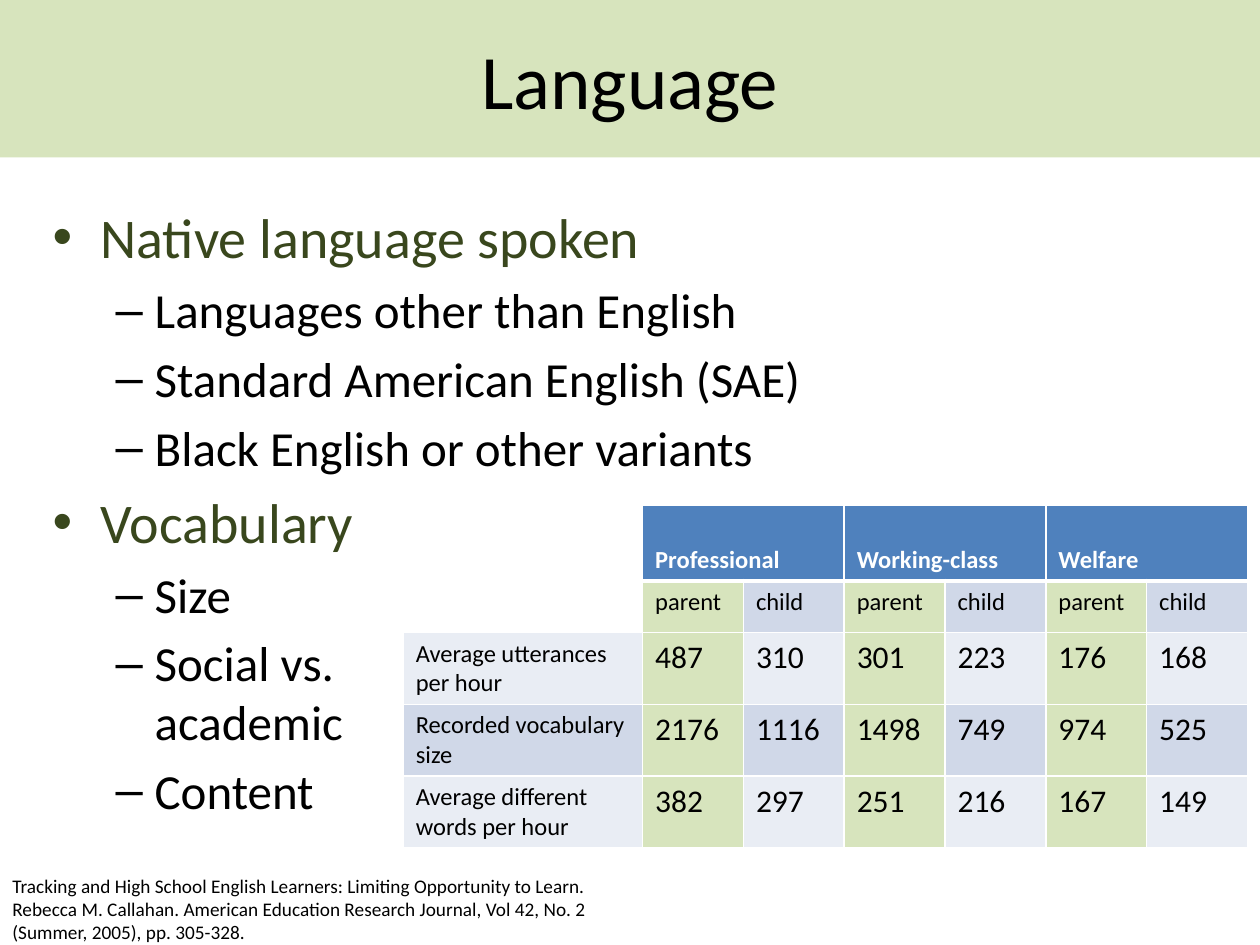
from lxml import etree
from pptx import Presentation
from pptx import util as u
from pptx.dml import color
from pptx.enum import text
from pptx.oxml import ns

FONT = "Calibri"
BLACK, WHITE, OLIVE = "000000", "FFFFFF", "39471D"
GREEN, BLUE = "D7E4BD", "4F81BD"
BANDS = ["D0D8E8", "E9EDF4"]


def rgb(value):
    return color.RGBColor.from_string(value)


def write(para, words, size=14, ink=BLACK, bold=False, align=None):
    para.text = words
    para.alignment = align
    for span in para.runs:
        span.font.name = FONT
        span.font.size = u.Pt(size)
        span.font.bold = bold
        span.font.color.rgb = rgb(ink)


def add_bullet(para, mark, left, hang):
    props = para._p.get_or_add_pPr()
    props.set("marL", str(u.Inches(left)))
    props.set("indent", str(-u.Inches(hang)))
    font = etree.SubElement(props, ns.qn("a:buFont"))
    font.set("typeface", "Arial")
    etree.SubElement(props, ns.qn("a:buChar")).set("char", mark)


def set_borders(cell, bottom=1):
    props = cell._tc.get_or_add_tcPr()
    for side, width in [("L", 1), ("R", 1), ("T", 1), ("B", bottom)]:
        line = etree.SubElement(props, ns.qn("a:ln" + side))
        line.set("w", str(u.Pt(width)))
        fill = etree.SubElement(line, ns.qn("a:solidFill"))
        etree.SubElement(fill, ns.qn("a:srgbClr")).set("val", WHITE)


class SlideBuilder:
    # Bullet mark, left indent, hanging indent, text size, colour per level
    levels = [("•", 0.38, 0.38, 32, OLIVE), ("–", 0.81, 0.31, 28, BLACK)]

    def __init__(self, slide):
        self.slide = slide

    def title(self, words, left, top, width, height):
        box = self.slide.shapes.title
        box.left, box.top = u.Inches(left), u.Inches(top)
        box.width, box.height = u.Inches(width), u.Inches(height)
        box.fill.solid()
        box.fill.fore_color.rgb = rgb(GREEN)
        box.text_frame.vertical_anchor = text.MSO_ANCHOR.MIDDLE
        write(box.text_frame.paragraphs[0], words, size=44,
              align=text.PP_ALIGN.CENTER)

    def text_box(self, left, top, width, height):
        box = self.slide.shapes.add_textbox(
            u.Inches(left), u.Inches(top), u.Inches(width), u.Inches(height))
        box.text_frame.word_wrap = True
        return box.text_frame

    def bullets(self, items, *place):
        frame = self.text_box(*place)
        for i, (level, words) in enumerate(items):
            para = frame.add_paragraph() if i else frame.paragraphs[0]
            mark, left, hang, size, ink = self.levels[level]
            write(para, words, size=size, ink=ink)
            para.level = level
            para.space_before = u.Pt(size * 0.2)
            add_bullet(para, mark, left, hang)

    def note(self, words, *place):
        write(self.text_box(*place).paragraphs[0], words, size=11)

    def table(self, groups, rows, left, top, widths, heights):
        grid = self.slide.shapes.add_table(
            len(heights), len(widths), u.Inches(left), u.Inches(top),
            u.Inches(sum(widths)), u.Inches(sum(heights))).table
        for column, width in zip(grid.columns, widths):
            column.width = u.Inches(width)
        for row, height in zip(grid.rows, heights):
            row.height = u.Inches(height)

        # Group headings, each over a parent and a child column
        for i, words in enumerate(groups):
            cell = grid.cell(0, 1 + 2 * i)
            cell.merge(grid.cell(0, 2 + 2 * i))
            cell.vertical_anchor = text.MSO_ANCHOR.BOTTOM
            write(cell.text_frame.paragraphs[0], words, ink=WHITE, bold=True)

        # Subheadings and figures
        for r, values in enumerate(rows, 1):
            for c, value in enumerate(values):
                size = 18 if r > 1 and c > 0 else 14
                write(grid.cell(r, c).text_frame.paragraphs[0], value, size=size)

        # Borders and fills: parent columns green, the rest banded
        for r in range(len(heights)):
            for c in range(len(widths)):
                cell = grid.cell(r, c)
                set_borders(cell, bottom=3 if r == 0 and c else 1)
                if r < 2 and c == 0:
                    cell.fill.background()
                    continue
                cell.fill.solid()
                shade = BLUE if r == 0 else GREEN if c % 2 else BANDS[(r - 1) % 2]
                cell.fill.fore_color.rgb = rgb(shade)


def main():
    deck = Presentation()
    deck.slide_width, deck.slide_height = u.Inches(10), u.Inches(7.5)
    page = SlideBuilder(deck.slides.add_slide(deck.slide_layouts[5]))

    page.title("Language", 0, 0, 10, 1.25)
    page.bullets([
        (0, "Native language spoken"),
        (1, "Languages other than English"),
        (1, "Standard American English (SAE)"),
        (1, "Black English or other variants"),
        (0, "Vocabulary"),
        (1, "Size"),
        (1, "Social vs.\nacademic"),
        (1, "Content"),
    ], 0.32, 1.56, 6.66, 5.77)

    # Words heard and used, by family group
    page.table(
        ["Professional", "Working-class", "Welfare"],
        [
            [""] + ["parent", "child"] * 3,
            ["Average utterances per hour", "487", "310", "301", "223", "176", "168"],
            ["Recorded vocabulary size", "2176", "1116", "1498", "749", "974", "525"],
            ["Average different words per hour", "382", "297", "251", "216", "167", "149"],
        ],
        3.2, 4.01, [1.9] + [0.8] * 6, [0.6, 0.41] + [0.57] * 3)

    # Source reference
    page.note(
        "Tracking and High School English Learners: Limiting Opportunity to Learn. "
        "Rebecca M. Callahan. American Education Research Journal, Vol 42, No. 2 "
        "(Summer, 2005), pp. 305-328.", 0, 6.89, 5, 0.66)

    deck.save("out.pptx")


if __name__ == "__main__":
    main()
